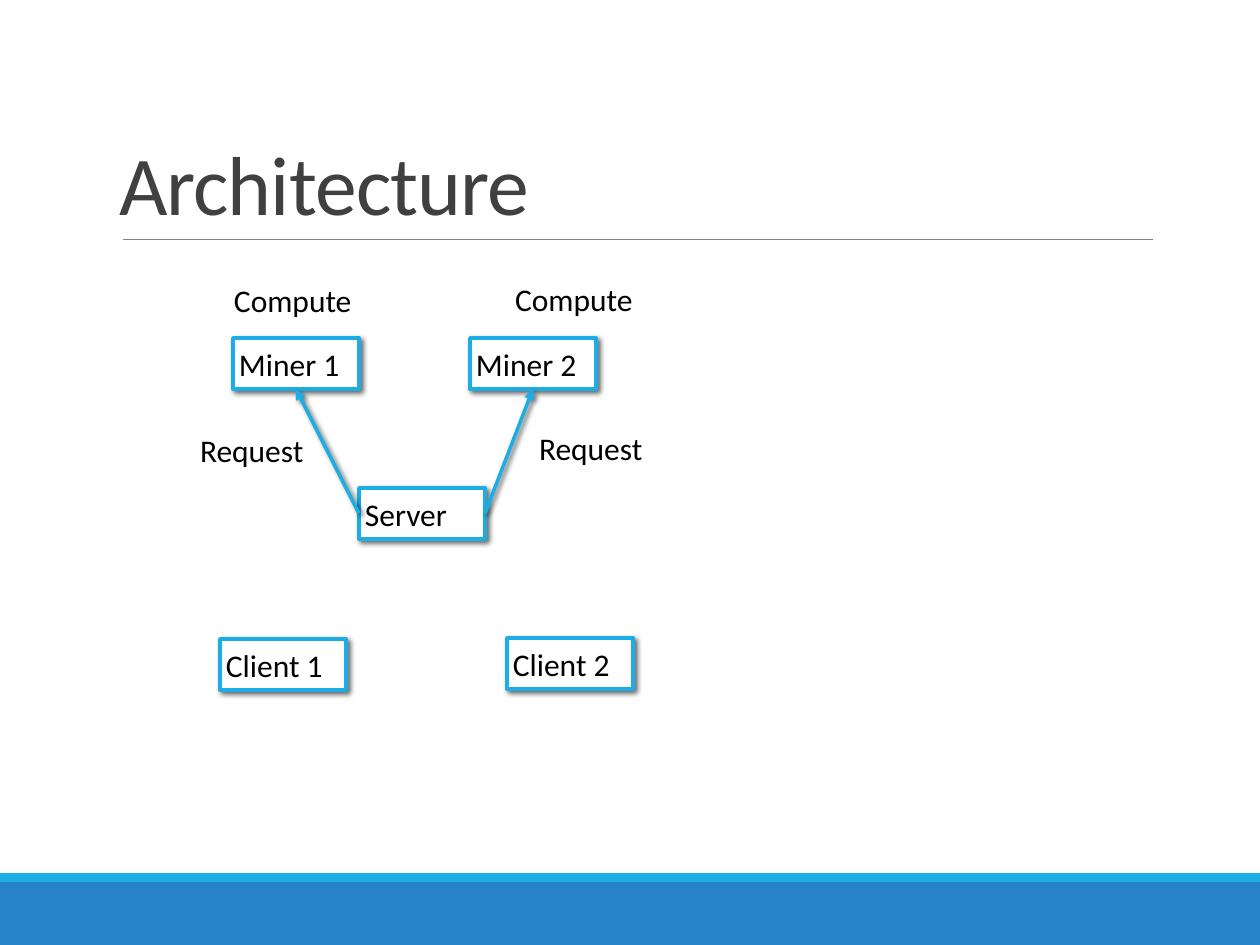
from dataclasses import dataclass

from lxml.etree import SubElement
from pptx import Presentation
from pptx.dml.color import RGBColor
from pptx.enum.shapes import MSO_CONNECTOR, MSO_SHAPE
from pptx.enum.text import MSO_ANCHOR, PP_ALIGN
from pptx.oxml import parse_xml
from pptx.oxml.ns import nsdecls, qn
from pptx.util import Emu, Pt

PX_PER_INCH = 126
TOP, LEFT, BOTTOM, RIGHT = range(4)  # connection sites of a rectangle


@dataclass(frozen=True)
class Theme:
    font: str = "Calibri"
    title_size: float = 47.8
    body_size: float = 18
    title: str = "404040"
    text: str = "000000"
    paper: str = "FFFFFF"
    accent: str = "1CADE4"
    band: str = "2683C6"
    rule: str = "808080"
    shadow: str = "000000"


THEME = Theme()


def px(length):
    return Emu(round(length * 914400 / PX_PER_INCH))


def rgb(value):
    return RGBColor.from_string(value)


def add_shadow(element):
    element._element.spPr.append(parse_xml(
        f'<a:effectLst {nsdecls("a")}>'
        f'<a:outerShdw blurRad="{Pt(3)}" dist="{Pt(2)}" dir="{45 * 60000}" algn="tl" rotWithShape="0">'
        f'<a:srgbClr val="{THEME.shadow}"><a:alpha val="60000"/></a:srgbClr>'
        '</a:outerShdw></a:effectLst>'))


def write(holder, text, *, size=THEME.body_size, color=THEME.text,
          anchor=MSO_ANCHOR.TOP, wrap=True, line_spacing=None, tracking=None):
    frame = holder.text_frame
    frame.word_wrap = wrap
    frame.vertical_anchor = anchor
    frame.margin_left = frame.margin_right = px(6)
    frame.margin_top = frame.margin_bottom = px(6)
    paragraph = frame.paragraphs[0]
    paragraph.alignment = PP_ALIGN.LEFT
    if line_spacing:
        paragraph.line_spacing = line_spacing
    run = paragraph.add_run()
    run.text = text
    run.font.name = THEME.font
    run.font.size = Pt(size)
    run.font.color.rgb = rgb(color)
    if tracking:
        run.font._element.set("spc", str(round(tracking * 100)))


def add_text(slide, text, left, top, width, height, **style):
    box = slide.shapes.add_textbox(px(left), px(top), px(width), px(height))
    write(box, text, **style)


def add_rect(slide, left, top, width, height, fill):
    rect = slide.shapes.add_shape(MSO_SHAPE.RECTANGLE, px(left), px(top), px(width), px(height))
    rect.shadow.inherit = False
    rect.fill.solid()
    rect.fill.fore_color.rgb = rgb(fill)
    rect.line.fill.background()
    return rect


def add_node(slide, name, left, top):
    node = slide.shapes.add_shape(MSO_SHAPE.RECTANGLE, px(left), px(top), px(126), px(51))
    node.fill.solid()
    node.fill.fore_color.rgb = rgb(THEME.paper)
    node.line.color.rgb = rgb(THEME.accent)
    node.line.width = Pt(2)
    add_shadow(node)
    write(node, name, anchor=MSO_ANCHOR.MIDDLE)
    return node


def add_line(slide, start, end, color, weight):
    line = slide.shapes.add_connector(
        MSO_CONNECTOR.STRAIGHT, *(px(value) for value in (*start, *end)))
    line.line.color.rgb = rgb(color)
    line.line.width = Pt(weight)
    return line


def add_arrow(slide, source, source_site, target, target_site):
    arrow = add_line(slide, (0, 0), (0, 0), THEME.accent, 2)
    arrow.begin_connect(source, source_site)
    arrow.end_connect(target, target_site)
    SubElement(arrow.line._get_or_add_ln(), qn("a:tailEnd"), type="triangle")
    add_shadow(arrow)


def main():
    deck = Presentation()
    deck.slide_width, deck.slide_height = px(1260), px(945)
    slide = deck.slides.add_slide(deck.slide_layouts[6])

    # Footer bands and title rule
    add_rect(slide, 0, 882, 1260, 63, THEME.band)
    add_rect(slide, 0, 873, 1260, 9, THEME.accent)
    rule = add_line(slide, (123, 239), (1153, 239), THEME.rule, 0.5)
    SubElement(rule._element.spPr, qn("a:effectLst"))

    # Title
    add_text(slide, "Architecture", 113, 39, 1040, 200, size=THEME.title_size,
             color=THEME.title, anchor=MSO_ANCHOR.BOTTOM, line_spacing=0.85, tracking=-0.5)

    # Miners, server and clients
    miner_1 = add_node(slide, "Miner 1", 233, 338)
    miner_2 = add_node(slide, "Miner 2", 470, 338)
    server = add_node(slide, "Server", 359, 488)
    add_node(slide, "Client 1", 220, 639)
    add_node(slide, "Client 2", 507, 638)

    # Requests from the server to the miners
    add_arrow(slide, server, LEFT, miner_1, BOTTOM)
    add_arrow(slide, server, RIGHT, miner_2, BOTTOM)

    # Labels
    for label, left, top, width in (
        ("Request", 194, 425, 117),
        ("Compute", 509, 274, 131),
        ("Compute", 228, 275, 131),
        ("Request", 533, 423, 117),
    ):
        add_text(slide, label, left, top, width, 51, wrap=False)

    deck.save("out.pptx")


if __name__ == "__main__":
    main()
